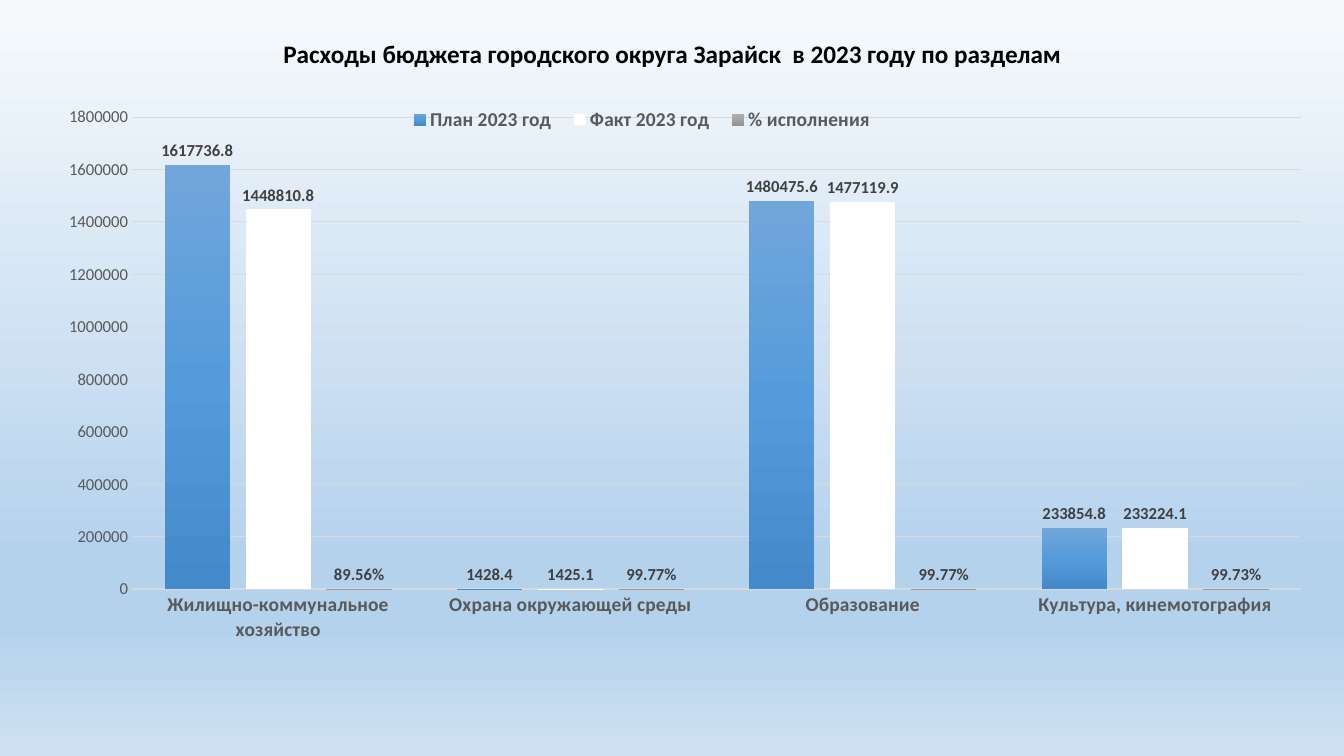
from lxml import etree
from pptx import Presentation
from pptx.chart.data import CategoryChartData
from pptx.dml.color import RGBColor as RGB
from pptx.enum.chart import XL_CHART_TYPE as Kind, XL_LABEL_POSITION as Spot
from pptx.enum.chart import XL_LEGEND_POSITION as Side, XL_TICK_MARK as Tick
from pptx.enum.text import MSO_ANCHOR as Anchor, PP_ALIGN as Align
from pptx.oxml.ns import qn
from pptx.util import Emu, Pt

PX = 914400 / 100.8
BLACK = RGB(0x00, 0x00, 0x00)
DARK = RGB(0x40, 0x40, 0x40)
GREY = RGB(0x59, 0x59, 0x59)
PALE = RGB(0xD9, 0xD9, 0xD9)
WHITE = RGB(0xFF, 0xFF, 0xFF)
SKY = [(0, RGB(0xF7, 0xFA, 0xFD)), (74, RGB(0xB5, 0xD2, 0xEC)),
       (83, RGB(0xB5, 0xD2, 0xEC)), (100, RGB(0xCE, 0xE1, 0xF2))]
BLUE = [(0, RGB(0x71, 0xA6, 0xDB)), (50, RGB(0x55, 0x9B, 0xDB)),
        (100, RGB(0x44, 0x8A, 0xCA))]
STEEL = [(0, RGB(0xAF, 0xAF, 0xAF)), (50, RGB(0xA5, 0xA5, 0xA5)),
         (100, RGB(0x93, 0x93, 0x93))]


def shade(host, stops):
    """Turn the solid fill inside host into a top-to-bottom gradient."""
    grad = etree.Element(qn("a:gradFill"), rotWithShape="1")
    row = etree.SubElement(grad, qn("a:gsLst"))
    for pos, tone in stops:
        stop = etree.SubElement(row, qn("a:gs"), pos=str(pos * 1000))
        etree.SubElement(stop, qn("a:srgbClr"), val=str(tone))
    etree.SubElement(grad, qn("a:lin"), ang="5400000", scaled="0")
    solid = next(host.iter(qn("a:solidFill")))
    solid.getparent().replace(solid, grad)


def style(font, size, tone, bold=False):
    font.name, font.size, font.bold = "Calibri", Pt(size), bold
    font.color.rgb = tone


deck = Presentation()
deck.slide_width, deck.slide_height = Emu(round(1344 * PX)), Emu(round(756 * PX))
slide = deck.slides.add_slide(deck.slide_layouts[6])
slide.background.fill.solid()
shade(next(slide.element.iter(qn("p:bgPr"))), SKY)

# Title
spot = [Emu(round(n * PX)) for n in (93, 17, 1159, 76)]
frame = slide.shapes.add_textbox(*spot).text_frame
frame.word_wrap = True
frame.vertical_anchor = Anchor.MIDDLE
title = frame.paragraphs[0]
title.text = "Расходы бюджета городского округа Зарайск  в 2023 году по разделам"
title.alignment = Align.CENTER
title.line_spacing = 0.9
style(title.font, 18, BLACK, True)

# Chart data
rows = [
    ("План 2023 год", (1617736.8, 1428.4, 1480475.6, 233854.8), "General", BLUE),
    ("Факт 2023 год", (1448810.8, 1425.1, 1477119.9, 233224.1), "General", None),
    ("% исполнения", (0.8956, 0.9977, 0.9977, 0.9973), "0.00%", STEEL),
]
data = CategoryChartData()
data.categories = ["Жилищно-коммунальное хозяйство", "Охрана окружающей среды",
                   "Образование", "Культура, кинемотография"]
for name, vals, form, _ in rows:
    data.add_series(name, vals, form)

spot = [Emu(round(n * PX)) for n in (69, 93, 1233, 588)]
chart = slide.shapes.add_chart(Kind.COLUMN_CLUSTERED, *spot, data).chart
chart.has_title = False
style(chart.font, 10, BLACK)

# Columns and their labels
plot = chart.plots[0]
plot.vary_by_categories = False
plot.gap_width, plot.overlap = 100, -24
for bar, (_, _, form, stops) in zip(plot.series, rows):
    fill = bar.format.fill
    fill.solid()
    fill.fore_color.rgb = WHITE
    if stops:
        shade(bar.format.element, stops)
    tags = bar.data_labels
    tags.show_value = True
    tags.position = Spot.OUTSIDE_END
    tags.number_format, tags.number_format_is_linked = form, False
    style(tags.font, 12, DARK, True)

# Axes
cat, val = chart.category_axis, chart.value_axis
for axis in (cat, val):
    axis.major_tick_mark = axis.minor_tick_mark = Tick.NONE
style(cat.tick_labels.font, 14, GREY, True)
style(val.tick_labels.font, 12, GREY)
val.tick_labels.number_format = "General"
val.tick_labels.number_format_is_linked = False
val.format.line.fill.background()
val.has_major_gridlines = True
for line, width in ((cat.format.line, 1), (val.major_gridlines.format.line, 0.75)):
    line.color.rgb = PALE
    line.width = Pt(width)

# Legend and plot places, as shares of the chart
chart.has_legend = True
legend = chart.legend
legend.position = Side.BOTTOM
legend.include_in_layout = True
style(legend.font, 14, GREY, True)
area = next(chart.element.iter(qn("c:plotArea")))
key = next(chart.element.iter(qn("c:legend")))
for host, index, inner, box in ((area, 0, True, (0.059, 0.041, 0.958, 0.803)),
                                (key, 1, False, (0.26, 0.02, 0.4, 0.05))):
    for old in host.findall(qn("c:layout")):
        host.remove(old)
    layout = etree.Element(qn("c:layout"))
    place = etree.SubElement(layout, qn("c:manualLayout"))
    marks = [("layoutTarget", "inner")] if inner else []
    marks += [("xMode", "edge"), ("yMode", "edge")]
    marks += zip("xywh", map(str, box))
    for mark, value in marks:
        etree.SubElement(place, qn("c:" + mark), val=value)
    host.insert(index, layout)

deck.save("out.pptx")
